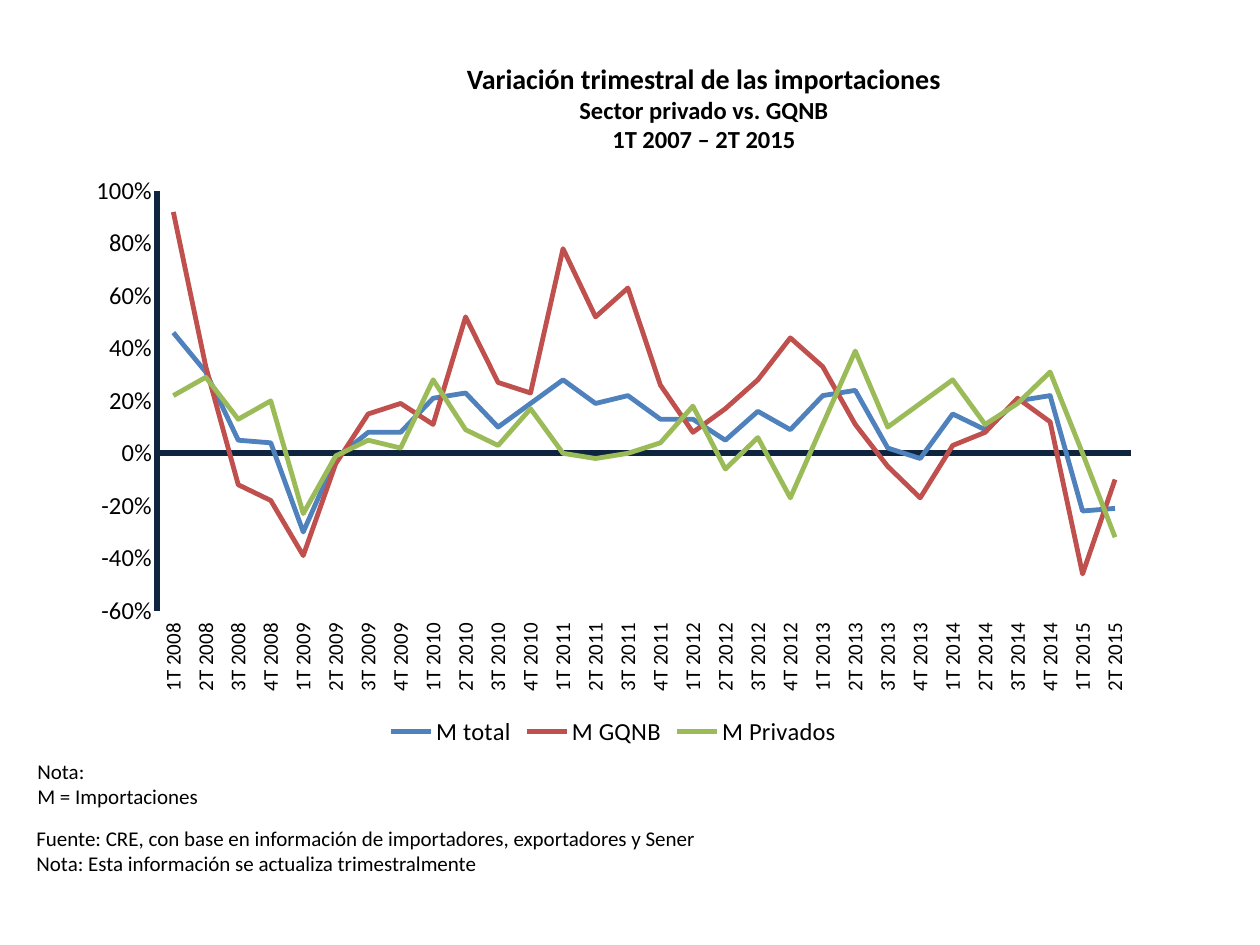
"""Build a slide with a line chart of quarterly import changes."""
import itertools
import lxml.etree
import pptx
import pptx.chart.data
import pptx.dml.color
import pptx.enum.chart
import pptx.enum.text
import pptx.oxml
import pptx.oxml.ns
import pptx.util

TITLE = ["Variación trimestral de las importaciones", "Sector privado vs. GQNB", "1T 2007 – 2T 2015"]
KEY = ["Nota:", "M = Importaciones"]
SOURCE = [
    "Fuente: CRE, con base en información de importadores, exportadores y Sener",
    "Nota: Esta información se actualiza trimestralmente",
]
QUARTERS = [f"{part}T {year}" for year, part in itertools.product(range(2008, 2016), range(1, 5))][:30]
SERIES = {
    "M total": [
        0.46, 0.31, 0.05, 0.04, -0.3, -0.02, 0.08, 0.08, 0.21, 0.23,
        0.1, 0.19, 0.28, 0.19, 0.22, 0.13, 0.13, 0.05, 0.16, 0.09,
        0.22, 0.24, 0.02, -0.02, 0.15, 0.09, 0.2, 0.22, -0.22, -0.21],
    "M GQNB": [
        0.92, 0.33, -0.12, -0.18, -0.39, -0.04, 0.15, 0.19, 0.11, 0.52,
        0.27, 0.23, 0.78, 0.52, 0.63, 0.26, 0.08, 0.17, 0.28, 0.44,
        0.33, 0.11, -0.05, -0.17, 0.03, 0.08, 0.21, 0.12, -0.46, -0.1],
    "M Privados": [
        0.22, 0.29, 0.13, 0.2, -0.23, -0.01, 0.05, 0.02, 0.28, 0.09,
        0.03, 0.17, 0, -0.02, 0, 0.04, 0.18, -0.06, 0.06, -0.17,
        0.11, 0.39, 0.1, 0.19, 0.28, 0.11, 0.19, 0.31, 0, -0.32],
}
THEME = {
    "font": "Calibri", "ink": "000000", "axis": "0F243E",
    "lines": ["4F81BD", "C0504D", "9BBB59"],
    "head": 16, "sub": 14, "note": 12, "tick": 12, "label": 14,
    "stroke": 2.75, "base": 3.5, "side": 3,
}
PLACES = {
    "title": (214, 55, 980, 106),
    "key": (25, 752, 985, 63),
    "source": (24, 819, 985, 115),
    "chart": (74, 164, 1079, 588),
    "plot": (157, 191, 974, 420),
}
SCALE = 914400 / 126


def emu(name):
    return [pptx.util.Emu(round(part * SCALE)) for part in PLACES[name]]


def tint(code):
    return pptx.dml.color.RGBColor.from_string(code)


def style(font, size, bold=False):
    font.name = THEME["font"]
    font.size = pptx.util.Pt(size)
    font.bold = bold
    font.color.rgb = tint(THEME["ink"])


def write(shape, lines, sizes, align, bold=False):
    frame = shape.text_frame
    frame.word_wrap = True
    frame.auto_size = pptx.enum.text.MSO_AUTO_SIZE.NONE
    frame.vertical_anchor = pptx.enum.text.MSO_ANCHOR.TOP
    frame.text = "\n".join(lines)
    for para, size in zip(frame.paragraphs, sizes):
        para.alignment = align
        for run in para.runs:
            style(run.font, size, bold)


def stroke(line, code, width):
    line.color.rgb = tint(code)
    line.width = pptx.util.Pt(width)


def place_plot(chart):
    left, top, wide, high = PLACES["chart"]
    x, y, w, h = PLACES["plot"]
    parts = {"x": (x - left) / wide, "y": (y - top) / high, "w": w / wide, "h": h / high}
    qn = pptx.oxml.ns.qn
    area = chart.plots[0]._element.getparent()
    for old in area.findall(qn("c:layout")):
        area.remove(old)
    layout = lxml.etree.Element(qn("c:layout"))
    area.insert(0, layout)
    manual = lxml.etree.SubElement(layout, qn("c:manualLayout"))
    rules = [("layoutTarget", "inner"), ("xMode", "edge"), ("yMode", "edge")]
    for tag, val in rules + [(key, f"{part:.3f}") for key, part in parts.items()]:
        lxml.etree.SubElement(manual, qn("c:" + tag)).set("val", val)


def add_lines(slide):
    enum = pptx.enum.chart
    data = pptx.chart.data.CategoryChartData(number_format="0%")
    data.categories = QUARTERS
    for name, vals in SERIES.items():
        data.add_series(name, vals)
    chart = slide.shapes.add_chart(enum.XL_CHART_TYPE.LINE, *emu("chart"), data).chart
    chart.has_title = False
    style(chart.font, THEME["label"])
    chart.plots[0].vary_by_categories = False
    for line, code in zip(chart.plots[0].series, THEME["lines"]):
        line.smooth = False
        line.marker.style = enum.XL_MARKER_STYLE.NONE
        stroke(line.format.line, code, THEME["stroke"])

    axes = [(chart.category_axis, "tick", "base"), (chart.value_axis, "label", "side")]
    for axis, size, width in axes:
        axis.has_major_gridlines = False
        axis.major_tick_mark = axis.minor_tick_mark = enum.XL_TICK_MARK.NONE
        style(axis.tick_labels.font, THEME[size])
        stroke(axis.format.line, THEME["axis"], THEME[width])
    base, side = chart.category_axis, chart.value_axis
    base.tick_label_position = enum.XL_TICK_LABEL_POSITION.LOW
    body = base._element.find(".//" + pptx.oxml.ns.qn("a:bodyPr"))
    body.set("rot", "-5400000")
    body.set("vert", "horz")
    side.minimum_scale, side.maximum_scale, side.major_unit = -0.6, 1, 0.2
    side.tick_labels.number_format = "0%"
    side.tick_labels.number_format_is_linked = False

    chart.has_legend = True
    chart.legend.position = enum.XL_LEGEND_POSITION.BOTTOM
    chart.legend.include_in_layout = False
    style(chart.legend.font, THEME["label"])
    place_plot(chart)


def main():
    deck = pptx.Presentation()
    deck.slide_width, deck.slide_height = pptx.util.Inches(10), pptx.util.Inches(7.5)
    slide = deck.slides.add_slide(deck.slide_layouts[5])
    align = pptx.enum.text.PP_ALIGN
    title = slide.shapes.title
    title.left, title.top, title.width, title.height = emu("title")
    write(title, TITLE, [THEME["head"], THEME["sub"], THEME["sub"]], align.CENTER, True)
    add_lines(slide)
    for name, lines in (("key", KEY), ("source", SOURCE)):
        box = slide.shapes.add_textbox(*emu(name))
        write(box, lines, itertools.repeat(THEME["note"]), align.LEFT)
    deck.save("out.pptx")


if __name__ == "__main__":
    main()
